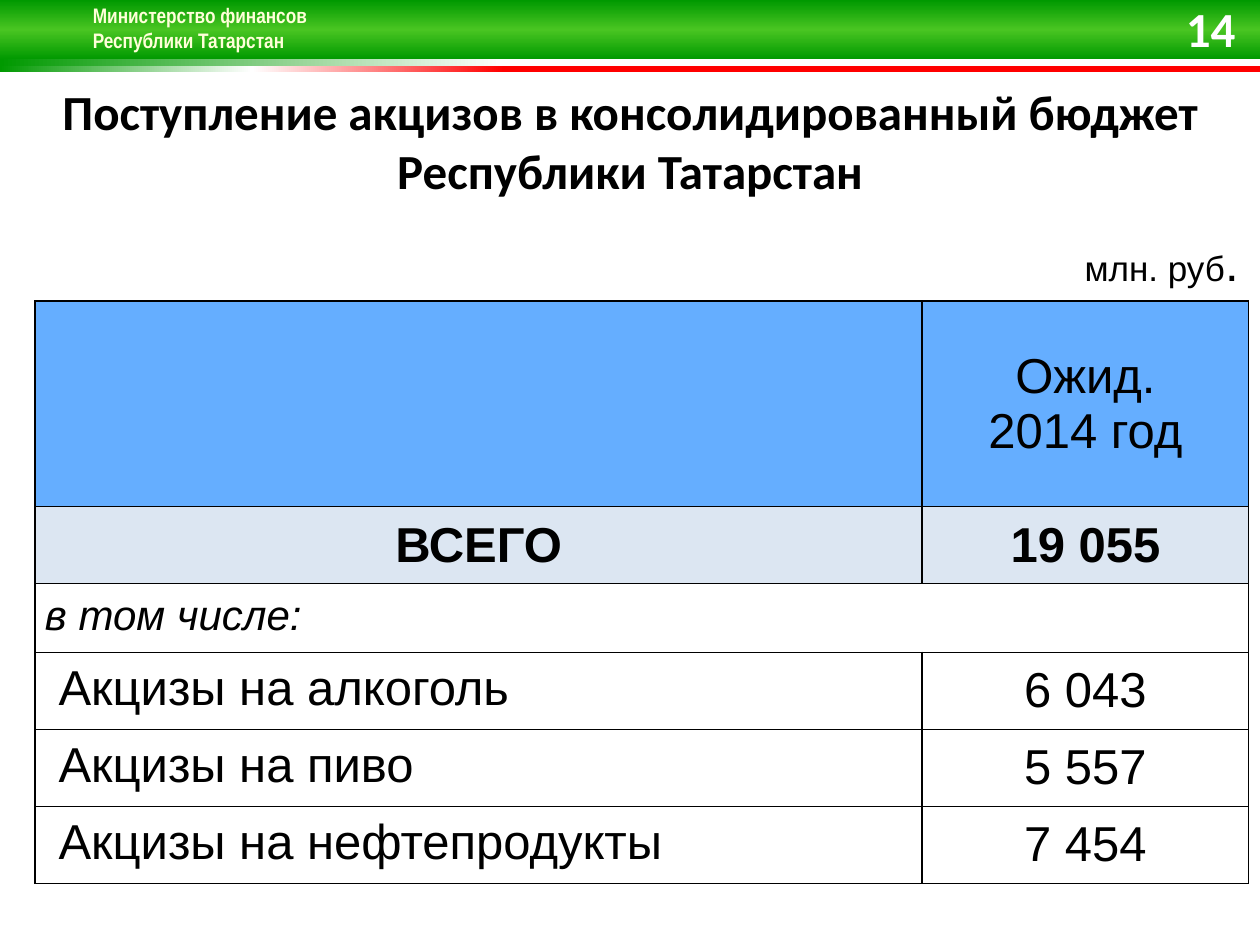
import pptx
import pptx.util
import pptx.dml.color
import pptx.enum.shapes
import pptx.enum.text
import pptx.oxml
import pptx.oxml.ns

Pt = pptx.util.Pt
RGB = pptx.dml.color.RGBColor
ALIGN = pptx.enum.text.PP_ALIGN
ANCHOR = pptx.enum.text.MSO_ANCHOR

BLACK = RGB(0, 0, 0)
WHITE = RGB(255, 255, 255)
GREEN = RGB(0, 0x99, 0)
LIME = RGB(0x49, 0xC5, 0x22)
RED = RGB(255, 0, 0)
CREAM = RGB(0xFF, 0xFF, 0xD9)
BLUE = RGB(0x65, 0xAE, 0xFF)
PALE = RGB(0xDC, 0xE6, 0xF2)

NS = pptx.oxml.ns.nsdecls("a")
LEAD = 7.8  # left margin of the excise names


def add_band(slide, top, height, stops, angle):
    band = slide.shapes.add_shape(
        pptx.enum.shapes.MSO_SHAPE.RECTANGLE, 0, Pt(top), Pt(720), Pt(height))
    band.shadow.inherit = False
    band.line.fill.background()
    marks = "".join(
        f'<a:gs pos="{pos * 1000}"><a:srgbClr val="{color}"/></a:gs>'
        for pos, color in stops)
    grad = pptx.oxml.parse_xml(
        f'<a:gradFill {NS} rotWithShape="1"><a:gsLst>{marks}</a:gsLst>'
        f'<a:lin ang="{angle * 60000}" scaled="0"/></a:gradFill>')
    band._element.spPr.find(pptx.oxml.ns.qn("a:prstGeom")).addnext(grad)


def style(part, size, font="Arial", color=BLACK, bold=False, slant=False):
    for run in part.runs:
        run.font.size = Pt(size)
        run.font.name = font
        run.font.color.rgb = color
        run.font.bold = bold
        run.font.italic = slant


def add_text(slide, box, text, size, font, color, align, anchor=ANCHOR.TOP):
    frame = slide.shapes.add_textbox(*map(Pt, box)).text_frame
    frame.word_wrap = True
    frame.vertical_anchor = anchor
    frame.text = text
    part = frame.paragraphs[0]
    part.alignment = align
    style(part, size, font, color, bold=True)
    return part


def add_shade(part):
    for run in part.runs:
        shade = pptx.oxml.parse_xml(
            f'<a:effectLst {NS}><a:outerShdw blurRad="38100" dist="38100" '
            'dir="2700000" algn="tl"><a:srgbClr val="000000"/>'
            '</a:outerShdw></a:effectLst>')
        run._r.rPr.find(pptx.oxml.ns.qn("a:solidFill")).addnext(shade)


def set_edges(cell, shown):
    for index, side in enumerate("LRTB"):
        paint = ('<a:solidFill><a:srgbClr val="000000"/></a:solidFill>'
                 if side in shown else "<a:noFill/>")
        edge = pptx.oxml.parse_xml(
            f'<a:ln{side} {NS} w="12700">{paint}</a:ln{side}>')
        cell._tc.get_or_add_tcPr().insert(index, edge)


def fill_cell(cell, text, align, size=28, fill=None, anchor=ANCHOR.TOP,
              bold=False, slant=False, lead=0):
    cell.margin_left = cell.margin_right = Pt(5.7)
    cell.margin_top = cell.margin_bottom = Pt(5.2)
    cell.vertical_anchor = anchor
    if fill:
        cell.fill.solid()
        cell.fill.fore_color.rgb = fill
    else:
        cell.fill.background()
    cell.text = text
    part = cell.text_frame.paragraphs[0]
    part.alignment = align
    if lead:
        part._p.get_or_add_pPr().set("marL", str(Pt(lead)))
    part.font.size = Pt(size)
    style(part, size, bold=bold, slant=slant)


def add_table(slide):
    tall = [42.5, 117.5, 42.5, 38, 42.5, 42.5, 42.5]
    wide = [507, 186.5]
    table = slide.shapes.add_table(
        len(tall), len(wide), Pt(20), Pt(128),
        Pt(sum(wide)), Pt(sum(tall))).table
    table.first_row = table.horz_banding = False
    for row, size in zip(table.rows, tall):
        row.height = Pt(size)
    for column, size in zip(table.columns, wide):
        column.width = Pt(size)

    # Unit, heading, total and subtitle rows
    mid = ANCHOR.MIDDLE
    unit, note = table.cell(0, 0), table.cell(3, 0)
    fill_cell(unit, "млн. руб", ALIGN.RIGHT, 20, anchor=ANCHOR.BOTTOM)
    dot = unit.text_frame.paragraphs[0].add_run()
    dot.text = "."
    dot.font.size = Pt(28)
    dot.font.name = "Arial"
    dot.font.color.rgb = BLACK
    fill_cell(table.cell(1, 0), "", ALIGN.LEFT, fill=BLUE)
    fill_cell(table.cell(1, 1), "Ожид.\v2014 год", ALIGN.CENTER,
              fill=BLUE, anchor=mid)
    for column, text in enumerate(["ВСЕГО", "19 055"]):
        fill_cell(table.cell(2, column), text, ALIGN.CENTER,
                  fill=PALE, anchor=mid, bold=True)
    fill_cell(note, "в том числе:", ALIGN.LEFT, 24, slant=True)

    # Excise rows
    items = [("Акцизы на алкоголь", "6 043"),
             ("Акцизы на пиво", "5 557"),
             ("Акцизы на нефтепродукты", "7 454")]
    for row, (name, value) in enumerate(items, 4):
        fill_cell(table.cell(row, 0), name, ALIGN.LEFT, lead=LEAD)
        fill_cell(table.cell(row, 1), value, ALIGN.CENTER, anchor=mid)

    # Borders and merged rows
    for row in range(len(tall)):
        for column in range(len(wide)):
            set_edges(table.cell(row, column), "LRTB" if row else "B")
    for row, first in ((0, unit), (3, note)):
        last = table.cell(row, 1)
        last.fill.background()
        first.merge(last)


def main():
    deck = pptx.Presentation()
    deck.slide_width, deck.slide_height = Pt(720), Pt(540)
    slide = deck.slides.add_slide(deck.slide_layouts[6])

    # Header bands
    add_band(slide, 34, 3.6, [(0, WHITE), (60, WHITE), (100, GREEN)], 180)
    add_band(slide, 37.6, 3.6, [(60, RED), (80, WHITE), (100, GREEN)], 180)
    add_band(slide, 0, 34, [(0, GREEN), (50, LIME), (100, GREEN)], 90)

    # Header text, title and page number
    owner = add_text(slide, (46, -2, 138, 51),
                     "Министерство финансов\vРеспублики Татарстан",
                     12, "Arial Narrow", CREAM, ALIGN.LEFT)
    add_shade(owner)
    add_text(slide, (0, 43, 720, 45),
             "Поступление акцизов в консолидированный бюджет "
             "Республики Татарстан", 28, "Calibri", BLACK, ALIGN.CENTER)
    add_text(slide, (667, 4, 46, 24), "14", 28, "Calibri", WHITE,
             ALIGN.RIGHT, ANCHOR.MIDDLE)

    add_table(slide)
    deck.save("out.pptx")


if __name__ == "__main__":
    main()
